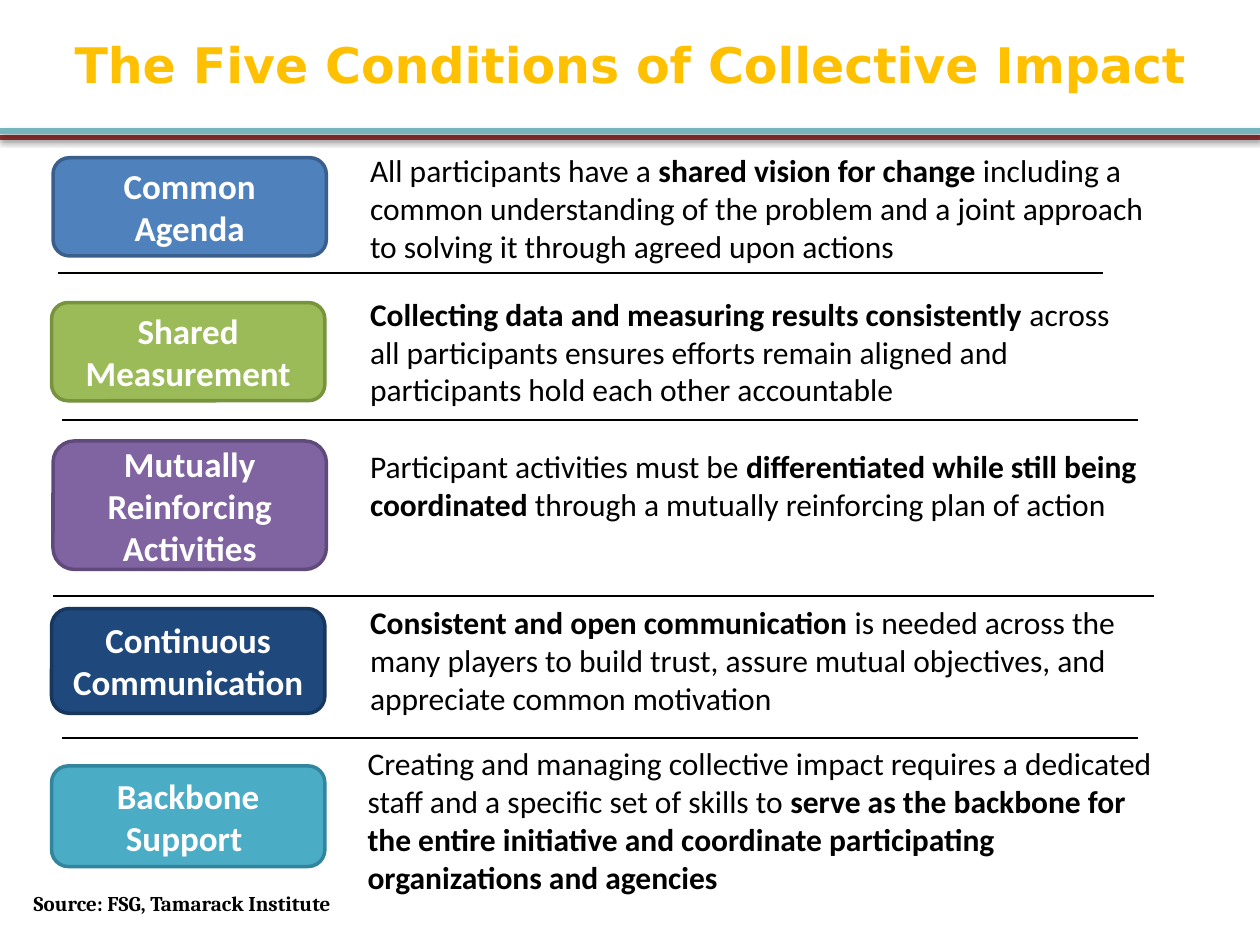
from lxml import etree
from pptx import Presentation
from pptx import util as u
from pptx.dml.color import RGBColor
from pptx.enum import shapes, text
from pptx.oxml.ns import qn

TITLE = "The Five Conditions of Collective Impact"
SOURCE = "Source: FSG, Tamarack Institute"

# label, fill, edge, box (left, top, height), text (left, top, width, height), runs (words, bold)
ROWS = [
    ("Common Agenda", "4F81BD", "3A5F8C", (1.07, 3.18, 1.98), (7.21, 2.92, 16.71, 2.57), [
        ("All participants have a ", False),
        ("shared vision for change ", True),
        ("including a common understanding of the problem and a joint approach "
         "to solving it through agreed upon actions", False)]),
    ("Shared Measurement", "9BBB59", "77933C", (1.04, 6.1, 1.98), (7.21, 5.82, 16.05, 2.57), [
        ("Collecting data and measuring results consistently ", True),
        ("across all participants ensures efforts remain aligned and "
         "participants hold each other accountable", False)]),
    ("Mutually Reinforcing Activities", "8064A2", "604A7B", (1.07, 8.89, 2.59),
     (7.21, 8.89, 16.05, 1.8), [
        ("Participant activities must be ", False),
        ("differentiated while still being coordinated ", True),
        ("through a mutually reinforcing plan of action", False)]),
    ("Continuous Communication", "1F497D", "17375E", (1.04, 12.27, 2.11),
     (7.21, 12.04, 16.05, 2.57), [
        ("Consistent and open communication ", True),
        ("is needed across the many players to build trust, assure mutual "
         "objectives, and appreciate common motivation", False)]),
    ("Backbone Support ", "4BACC6", "31859C", (1.04, 15.44, 2.03), (7.16, 14.88, 16.54, 3.33), [
        ("Creating and managing collective impact requires a dedicated staff "
         "and a specific set of skills to ", False),
        ("serve as the backbone for the entire initiative and coordinate "
         "participating organizations and agencies", True)]),
]
BOX_W = 5.51

# left, right, height on the slide
RULES = [(1.17, 22.23, 5.51), (1.24, 22.94, 8.46), (1.07, 23.27, 12.01), (1.24, 22.94, 14.88)]
# height on the slide, colour, weight
BANDS = [(2.77, "993235", 2.5), (2.64, "76B5BE", 3.5)]

deck = Presentation()
deck.slide_width, deck.slide_height = u.Cm(25.4), u.Cm(19.05)
slide = deck.slides.add_slide(deck.slide_layouts[6])


def rgb(code):
    return RGBColor.from_string(code)


def cm(nums):
    return [u.Cm(n) for n in nums]


def write(shape, runs, size, face="Calibri", color="000000", mid=False):
    """Fill a shape with one paragraph of (words, bold) runs."""
    frame = shape.text_frame
    frame.word_wrap = True
    frame.vertical_anchor = text.MSO_ANCHOR.MIDDLE if mid else text.MSO_ANCHOR.TOP
    para = frame.paragraphs[0]
    para.alignment = text.PP_ALIGN.CENTER if mid else text.PP_ALIGN.LEFT
    for words, bold in runs:
        run = para.add_run()
        run.text = words
        font = run.font
        font.name, font.size, font.bold = face, u.Pt(size), bold
        font.color.rgb = rgb(color)


def label(place, *args, **opts):
    """Add a text box and write in it."""
    write(slide.shapes.add_textbox(*cm(place)), *args, **opts)


def rule(left, right, y, color="000000", weight=1, shade=False):
    """Draw a level line, with a soft shadow below it if shade is set."""
    line = slide.shapes.add_connector(
        shapes.MSO_CONNECTOR.STRAIGHT, *cm((left, y, right, y)))
    line.line.color.rgb = rgb(color)
    line.line.width = u.Pt(weight)
    fx = etree.SubElement(line._element.spPr, qn("a:effectLst"))
    if shade:
        cast = etree.SubElement(fx, qn("a:outerShdw"), blurRad=str(u.Pt(3.1)),
                                dist=str(u.Pt(1.6)), dir="5400000", rotWithShape="0")
        tone = etree.SubElement(cast, qn("a:srgbClr"), val="000000")
        etree.SubElement(tone, qn("a:alpha"), val="38000")


for y, color, weight in BANDS:
    rule(0, 25.4, y, color, weight, shade=True)
label((0, 0.2, 25.4, 2.16), [(TITLE, True)], 28, "DejaVu Sans", "FFC000", mid=True)

for name, fill, edge, (left, top, high), place, runs in ROWS:
    box = slide.shapes.add_shape(
        shapes.MSO_SHAPE.ROUNDED_RECTANGLE, *cm((left, top, BOX_W, high)))
    box.shadow.inherit = False
    box.fill.solid()
    box.fill.fore_color.rgb = rgb(fill)
    box.line.color.rgb = rgb(edge)
    box.line.width = u.Pt(2)
    write(box, [(name, True)], 20, color="FFFFFF", mid=True)
    label(place, runs, 18)

for ends in RULES:
    rule(*ends)
label((0.43, 17.83, 6.68, 0.76), [(SOURCE, True)], 12, "Cambria")

deck.save("out.pptx")
